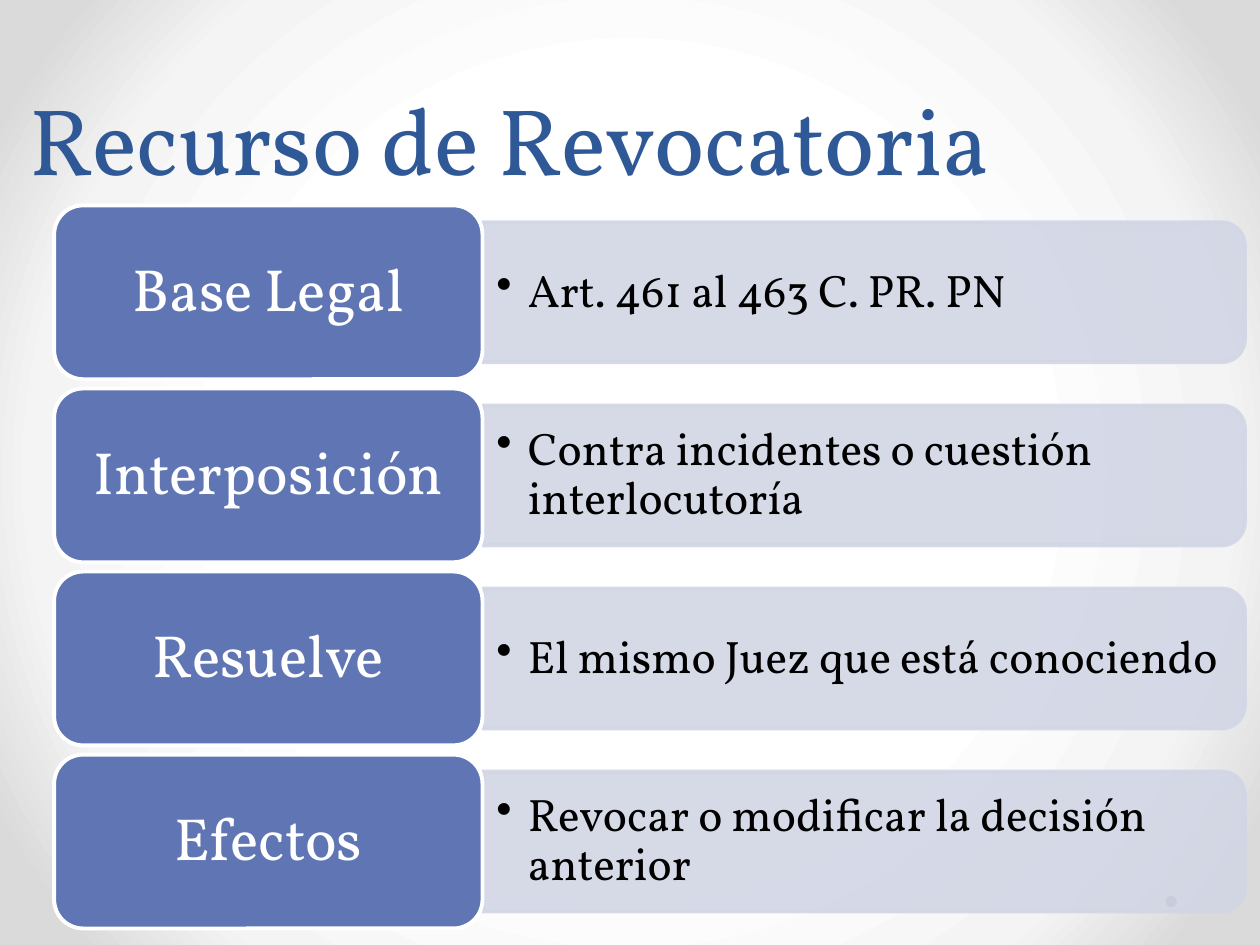
from lxml import etree
from pptx import Presentation
from pptx.dml.color import RGBColor
from pptx.enum.shapes import MSO_SHAPE
from pptx.enum.text import MSO_ANCHOR, PP_ALIGN
from pptx.oxml import parse_xml
from pptx.oxml.ns import nsdecls, qn
from pptx.util import Inches, Pt

TITLE = "Recurso de Revocatoria"
ROWS = [
    ("Base Legal", "Art. 461 al 463 C. PR. PN"),
    ("Interposición", "Contra incidentes o cuestión interlocutoría"),
    ("Resuelve", "El mismo Juez que está conociendo"),
    ("Efectos", "Revocar o modificar la decisión anterior"),
]

FONT = "Vollkorn"
TITLE_BLUE = RGBColor(0x2F, 0x58, 0x97)
LABEL_BLUE = RGBColor(0x60, 0x76, 0xB4)
PANEL_BLUE = RGBColor(0xD2, 0xD6, 0xE5)
DOT_GRAY = RGBColor(0x80, 0x80, 0x80)
WHITE = RGBColor(0xFF, 0xFF, 0xFF)
BLACK = RGBColor(0, 0, 0)
BACKGROUND_STOPS = [(50, "FFFFFF"), (76, "F4F4F4"), (92, "DADADA")]

LABEL_LEFT, LABEL_TOP, LABEL_WIDTH, LABEL_HEIGHT = 0.43, 1.63, 3.4, 1.38
ROW_PITCH = 1.453
PANEL_WIDTH, PANEL_HEIGHT = 6.05, 1.11
DETAIL_WIDTH, DETAIL_HEIGHT = 5.99, 1
PANEL_LEFT = LABEL_LEFT + LABEL_WIDTH

TITLE_FORMAT = {"alignment": PP_ALIGN.CENTER, "line_spacing": Pt(58)}
LABEL_FORMAT = {"alignment": PP_ALIGN.CENTER, "line_spacing": 0.9}
DETAIL_FORMAT = {"alignment": PP_ALIGN.LEFT, "line_spacing": 0.9}


def set_background(slide):
    stops = "".join(
        f'<a:gs pos="{position * 1000}"><a:srgbClr val="{color}"/></a:gs>'
        for position, color in BACKGROUND_STOPS
    )
    gradient = parse_xml(
        f'<a:gradFill {nsdecls("a")} rotWithShape="1"><a:gsLst>{stops}</a:gsLst>'
        '<a:path path="circle"><a:fillToRect l="50000" t="50000" r="50000" b="50000"/>'
        "</a:path></a:gradFill>"
    )
    slide.background.fill.solid()
    solid = next(slide.background._cSld.iter(qn("a:solidFill")))
    solid.getparent().replace(solid, gradient)


def add_filled_shape(slide, kind, box, color, line_color=None):
    shape = slide.shapes.add_shape(kind, *map(Inches, box))
    shape.shadow.inherit = False
    shape.fill.solid()
    shape.fill.fore_color.rgb = color
    if line_color is None:
        shape.line.fill.background()
    else:
        shape.line.color.rgb = line_color
        shape.line.width = Pt(2.25)
    return shape


def write_text(shape, text, size, color, formats, margins, anchor, bullet=False):
    """Fill the shape with one paragraph; margins are horizontal and vertical inches."""
    frame = shape.text_frame
    horizontal, vertical = map(Inches, margins)
    frame_format = {
        "word_wrap": True, "vertical_anchor": anchor,
        "margin_left": horizontal, "margin_right": horizontal,
        "margin_top": vertical, "margin_bottom": vertical,
    }
    for name, value in frame_format.items():
        setattr(frame, name, value)
    paragraph = frame.paragraphs[0]
    for name, value in formats.items():
        setattr(paragraph, name, value)
    if bullet:
        properties = paragraph._p.get_or_add_pPr()
        properties.set("marL", str(Inches(0.25)))
        properties.set("indent", str(Inches(-0.25)))
        etree.SubElement(properties, qn("a:buChar")).set("char", "•")
    run = paragraph.add_run()
    run.text = text
    for name, value in {"name": FONT, "size": Pt(size)}.items():
        setattr(run.font, name, value)
    run.font.color.rgb = color


def add_panel(slide, center):
    """Add a translucent bar, turned so that its rounded corners face right."""
    box = (PANEL_LEFT + (PANEL_WIDTH - PANEL_HEIGHT) / 2, center - PANEL_WIDTH / 2,
           PANEL_HEIGHT, PANEL_WIDTH)
    panel = add_filled_shape(slide, MSO_SHAPE.ROUND_2_SAME_RECTANGLE, box, PANEL_BLUE, PANEL_BLUE)
    panel.rotation = 90
    for color in panel._element.spPr.iter(qn("a:srgbClr")):
        etree.SubElement(color, qn("a:alpha")).set("val", "90000")


def add_row(slide, index, label_text, detail_text):
    top = LABEL_TOP + index * ROW_PITCH
    center = top + LABEL_HEIGHT / 2
    add_panel(slide, center)
    detail_box = (PANEL_LEFT, center - DETAIL_HEIGHT / 2, DETAIL_WIDTH, DETAIL_HEIGHT)
    detail = slide.shapes.add_textbox(*map(Inches, detail_box))
    write_text(detail, detail_text, 26, BLACK, DETAIL_FORMAT, (0.11, 0.05),
               MSO_ANCHOR.MIDDLE, bullet=True)
    label_box = (LABEL_LEFT, top, LABEL_WIDTH, LABEL_HEIGHT)
    label = add_filled_shape(slide, MSO_SHAPE.ROUNDED_RECTANGLE, label_box, LABEL_BLUE, WHITE)
    write_text(label, label_text, 34, WHITE, LABEL_FORMAT, (0.14, 0.07), MSO_ANCHOR.MIDDLE)


def main():
    presentation = Presentation()
    presentation.slide_width, presentation.slide_height = Inches(10), Inches(7.5)
    slide = presentation.slides.add_slide(presentation.slide_layouts[6])
    set_background(slide)
    add_filled_shape(slide, MSO_SHAPE.OVAL, (9.25, 7.11, 0.09, 0.09), DOT_GRAY)
    title = slide.shapes.add_textbox(*map(Inches, (-0.04, 0.52, 8.17, 1.07)))
    write_text(title, TITLE, 54, TITLE_BLUE, TITLE_FORMAT, (0.1, 0.05), MSO_ANCHOR.BOTTOM)
    for index, (label_text, detail_text) in enumerate(ROWS):
        add_row(slide, index, label_text, detail_text)
    presentation.save("out.pptx")


if __name__ == "__main__":
    main()
